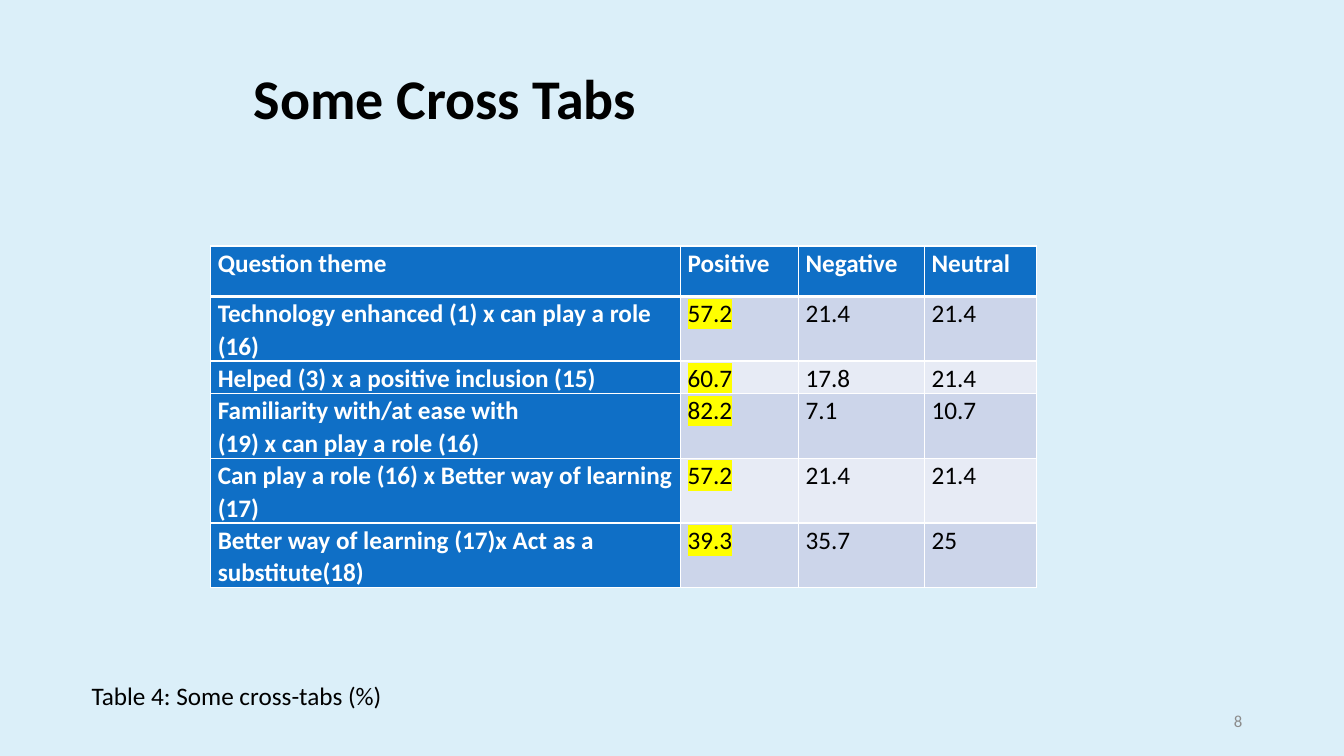
from lxml.etree import SubElement
from pptx import Presentation
from pptx.dml.color import RGBColor
from pptx.enum.text import MSO_ANCHOR, PP_ALIGN
from pptx.oxml.ns import qn
from pptx.util import Inches, Pt

TITLE = "Some Cross Tabs"
CAPTION = "Table 4: Some cross-tabs (%)"
PAGE_NUMBER = "8"
CROSS_TABS = [
    ("Question theme", "Positive", "Negative", "Neutral"),
    ("Technology enhanced (1) x can play a role (16)", "57.2", "21.4", "21.4"),
    ("Helped (3) x a positive inclusion (15)", "60.7", "17.8", "21.4"),
    ("Familiarity with/at ease with\n(19) x can play a role (16)", "82.2", "7.1", "10.7"),
    ("Can play a role (16) x Better way of learning (17)", "57.2", "21.4", "21.4"),
    ("Better way of learning (17)x Act as a substitute(18)", "39.3", "35.7", "25"),
]
COLUMN_WIDTHS = [4.66, 1.17, 1.25, 1.11]
ROW_HEIGHTS = [0.5, 0.5, 0.28, 0.57, 0.5, 0.57]
COLORS = {
    "background": "DBEFF9",
    "heading": "0F6FC6",
    "odd_row": "CCD5EA",
    "even_row": "E7EBF5",
    "highlight": "FFFF00",
    "white": "FFFFFF",
    "black": "000000",
    "gray": "8C8C8C",
}


def color(name):
    return RGBColor.from_string(COLORS[name])


def style_text(frame, size, ink, bold=False, spacing=None, align=None):
    for paragraph in frame.paragraphs:
        paragraph.alignment = align
        paragraph.line_spacing = spacing
        font = paragraph.font
        font.name, font.size, font.bold = "Calibri", Pt(size), bold
        font.color.rgb = color(ink)


def add_text(slide, text, box, anchor, size, ink, **style):
    frame = slide.shapes.add_textbox(*map(Inches, box)).text_frame
    frame.word_wrap = True
    frame.vertical_anchor = anchor
    frame.text = text
    style_text(frame, size, ink, **style)


def add_borders(cell, row):
    heavy_sides = {0: "lnB", 1: "lnT"}
    for side in ("lnL", "lnR", "lnT", "lnB"):
        width = 3 if heavy_sides.get(row) == side else 1
        line = SubElement(cell._tc.get_or_add_tcPr(), qn(f"a:{side}"), w=str(Pt(width)))
        fill = SubElement(line, qn("a:solidFill"))
        SubElement(fill, qn("a:srgbClr"), val=COLORS["white"])


def highlight(cell):
    properties = cell.text_frame.paragraphs[0].runs[0]._r.get_or_add_rPr()
    marker = SubElement(properties, qn("a:highlight"))
    SubElement(marker, qn("a:srgbClr"), val=COLORS["highlight"])


def fill_cell(cell, text, row, column):
    heading = row == 0 or column == 0
    cell.text = text
    cell.margin_left = cell.margin_right = Inches(0.07)
    cell.margin_top = cell.margin_bottom = 0
    style_text(cell.text_frame, 18, "white" if heading else "black", bold=heading, spacing=1.07)
    if column == 1 and not heading:
        highlight(cell)
    add_borders(cell, row)
    cell.fill.solid()
    band = "odd_row" if row % 2 else "even_row"
    cell.fill.fore_color.rgb = color("heading" if heading else band)


def add_cross_tabs(slide):
    table = slide.shapes.add_table(
        len(ROW_HEIGHTS), len(COLUMN_WIDTHS), Inches(2.09), Inches(2.44),
        Inches(sum(COLUMN_WIDTHS)), Inches(sum(ROW_HEIGHTS)),
    ).table
    table.first_row = table.horz_banding = False
    for column, width in zip(table.columns, COLUMN_WIDTHS):
        column.width = Inches(width)
    for row, height in zip(table.rows, ROW_HEIGHTS):
        row.height = Inches(height)
    for row, texts in enumerate(CROSS_TABS):
        for column, text in enumerate(texts):
            fill_cell(table.cell(row, column), text, row, column)


def main():
    deck = Presentation()
    deck.slide_width, deck.slide_height = Inches(13.33), Inches(7.5)
    slide = deck.slides.add_slide(deck.slide_layouts[6])
    slide.background.fill.solid()
    slide.background.fill.fore_color.rgb = color("background")
    add_text(slide, TITLE, (2.42, 0.4, 10, 1.21), MSO_ANCHOR.MIDDLE, 40, "black",
             bold=True, spacing=0.9)
    add_cross_tabs(slide)
    add_text(slide, CAPTION, (0.81, 6.7, 3.91, 0.4), MSO_ANCHOR.TOP, 18, "black")
    add_text(slide, PAGE_NUMBER, (9.42, 6.95, 3, 0.4), MSO_ANCHOR.MIDDLE, 12, "gray",
             align=PP_ALIGN.RIGHT)
    deck.save("out.pptx")


if __name__ == "__main__":
    main()
